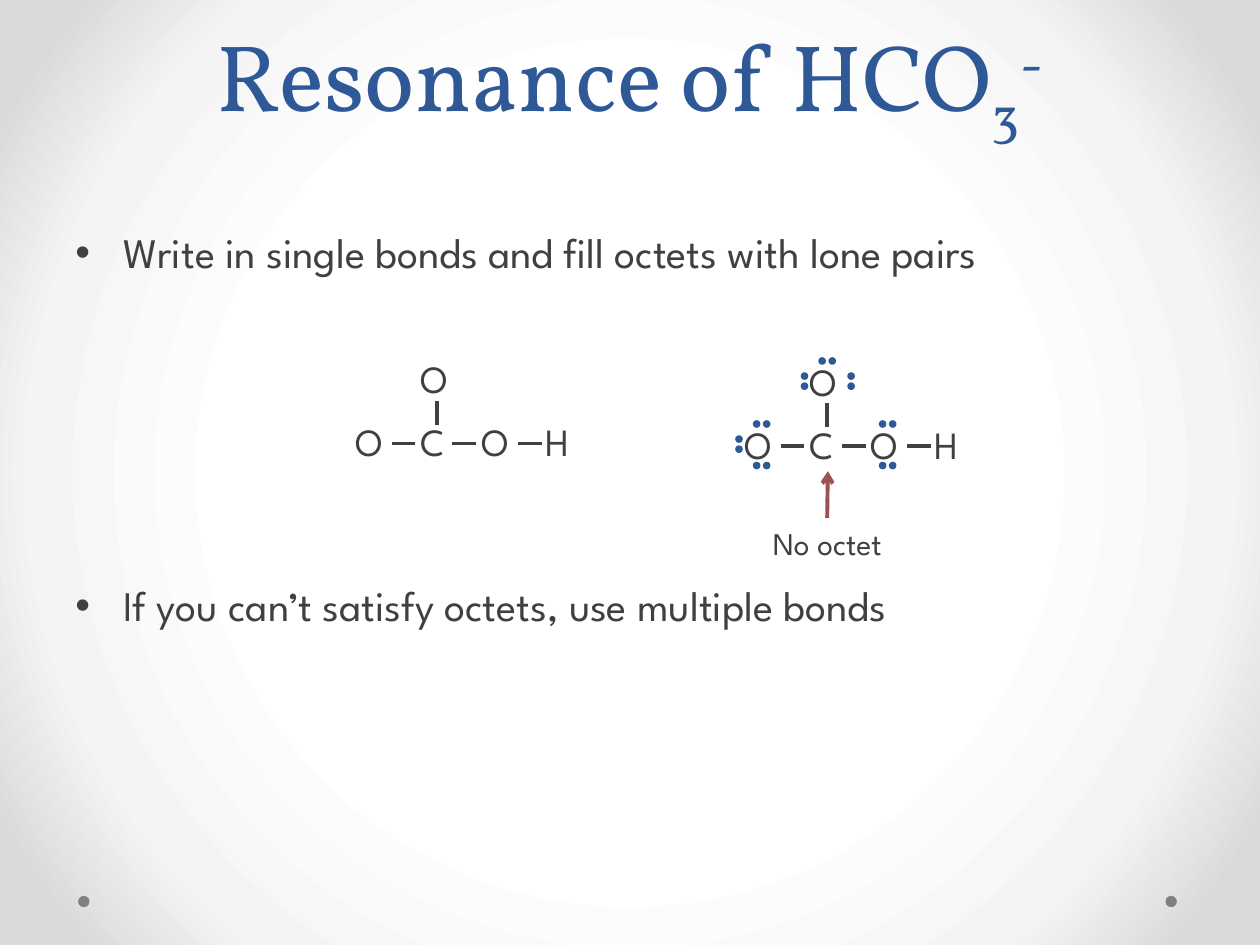
from pptx import Presentation
from pptx.dml.color import RGBColor
from pptx.enum.shapes import MSO_CONNECTOR, MSO_SHAPE
from pptx.enum.text import MSO_ANCHOR, MSO_AUTO_SIZE, PP_ALIGN
from pptx.oxml import parse_xml
from pptx.oxml.ns import nsdecls, qn
from pptx.util import Inches, Pt

WIDTH, HEIGHT = 10, 7.5
MARGIN = WIDTH * 0.05
BODY_FONT, TITLE_FONT = "League Spartan", "Vollkorn"
INK, BLUE, RED, GRAY, WHITE = "404040", "2F5897", "9C5252", "808080", "FFFFFF"

TITLE = [("Resonance of HCO", 0), ("3", -25), ("-", 30)]
BULLETS = [
    ("Write in single bonds and fill octets with lone pairs", 4.8),
    ("If you can’t satisfy octets, use multiple bonds", 173),
]
LABEL = "No octet"
BACKGROUND_STOPS = [(50, WHITE), (76, "F4F4F4"), (92, "DADADA")]
FOOTER_DOTS = [0.62, 9.25]

ATOM_HEIGHT = 0.47
ATOMS = [
    ("O", 0, -0.5, 0.47, ["above", "left", "right"]),
    ("O", -0.52, 0, 0.47, ["above", "below", "left"]),
    ("C", 0, 0, 0.45, []),
    ("O", 0.48, 0, 0.47, ["above", "below"]),
    ("H", 0.99, 0, 0.41, []),
]
BONDS = [
    (0.05, 0.25, -0.13, 0.25),
    (0.54, 0.25, 0.35, 0.25),
    (0.23, 0.1, 0.23, -0.09),
    (1.06, 0.25, 0.87, 0.25),
]
DOT, PAIR_GAP = 0.05, 0.08
PAIR_PLACES = {
    "above": (0.17, 0.05, True),
    "below": (0.17, 0.38, True),
    "left": (0.03, 0.17, False),
    "right": (0.4, 0.17, False),
}
MOLECULES = [(3.24, 3.27, False), (6.33, 3.29, True)]


def color(value):
    return RGBColor.from_string(value)


def box(*lengths):
    return [Inches(length) for length in lengths]


def style(run, size, font=BODY_FONT, ink=INK):
    run.font.size = Pt(size)
    run.font.name = font
    run.font.color.rgb = color(ink)


def add_text(shapes, text, place, size, wrap):
    text_box = shapes.add_textbox(*box(*place))
    frame = text_box.text_frame
    frame.text = text
    frame.word_wrap = wrap
    frame.auto_size = MSO_AUTO_SIZE.SHAPE_TO_FIT_TEXT
    style(frame.paragraphs[0].runs[0], size)
    return text_box


def add_dot(shapes, x, y, size, fill, outlined):
    dot = shapes.add_shape(MSO_SHAPE.OVAL, *box(x, y, size, size))
    dot.shadow.inherit = False
    dot.fill.solid()
    dot.fill.fore_color.rgb = color(fill)
    if outlined:
        dot.line.color.rgb = color(fill)
        dot.line.width = Pt(0.75)
    else:
        dot.line.fill.background()


def add_line(shapes, ends, ink):
    line = shapes.add_connector(MSO_CONNECTOR.STRAIGHT, *box(*ends))
    line.line.color.rgb = color(ink)
    line.line.width = Pt(2.25)
    line.element.spPr.append(parse_xml(f"<a:effectLst {nsdecls('a')}/>"))
    return line


def add_lone_pair(shapes, atom_x, atom_y, side):
    dx, dy, horizontal = PAIR_PLACES[side]
    for step in (0, PAIR_GAP):
        x = atom_x + dx + (step if horizontal else 0)
        y = atom_y + dy + (0 if horizontal else step)
        add_dot(shapes, x, y, DOT, BLUE, True)


def add_molecule(slide, left, top, with_pairs):
    shapes = slide.shapes.add_group_shape().shapes
    for symbol, dx, dy, width, sides in ATOMS:
        x, y = left + dx, top + dy
        add_text(shapes, symbol, (x, y, width, ATOM_HEIGHT), 22, symbol == "C")
        for side in sides if with_pairs else []:
            add_lone_pair(shapes, x, y, side)
    for x1, y1, x2, y2 in BONDS:
        add_line(shapes, (left + x1, top + y1, left + x2, top + y2), INK)


def paint_background(slide):
    slide.background.fill.gradient()
    gradient = slide.element.find(".//" + qn("a:gradFill"))
    stops = "".join(
        f'<a:gs pos="{share * 1000}"><a:srgbClr val="{value}"/></a:gs>'
        for share, value in BACKGROUND_STOPS
    )
    gradient.getparent().replace(gradient, parse_xml(
        f'<a:gradFill {nsdecls("a")} rotWithShape="1"><a:gsLst>{stops}</a:gsLst>'
        '<a:path path="circle"><a:fillToRect l="50000" t="50000" r="50000" b="50000"/>'
        "</a:path></a:gradFill>"
    ))


def write_title(slide):
    title = slide.shapes.title
    title.left, title.top, title.width, title.height = box(MARGIN, 0, WIDTH - 2 * MARGIN, 1.21)
    frame = title.text_frame
    frame.auto_size = MSO_AUTO_SIZE.NONE
    frame.vertical_anchor = MSO_ANCHOR.BOTTOM
    heading = frame.paragraphs[0]
    heading.alignment = PP_ALIGN.CENTER
    heading.line_spacing = Pt(58)
    for text, baseline in TITLE:
        run = heading.add_run()
        run.text = text
        style(run, 54, TITLE_FONT, BLUE)
        if baseline:
            run.font._element.set("baseline", str(baseline * 1000))


def write_bullets(slide):
    body = slide.shapes.add_textbox(*box(MARGIN, 1.75, WIDTH - 2 * MARGIN, 4.95))
    frame = body.text_frame
    frame.word_wrap = True
    frame.text = "\n".join(text for text, _ in BULLETS)
    for bullet, (_, space) in zip(frame.paragraphs, BULLETS):
        bullet.space_before = Pt(space)
        style(bullet.runs[0], 24)
        properties = bullet._p.get_or_add_pPr()
        properties.set("marL", str(Inches(0.38)))
        properties.set("indent", str(Inches(-0.38)))
        properties.append(parse_xml(f'<a:buFont {nsdecls("a")} typeface="Arial"/>'))
        properties.append(parse_xml(f'<a:buChar {nsdecls("a")} char="•"/>'))


def add_callout(slide):
    label = add_text(slide.shapes, LABEL, (5.87, 4.11, 1.39, 0.4), 18, True)
    label.fill.solid()
    label.fill.fore_color.rgb = color(WHITE)
    label.text_frame.paragraphs[0].alignment = PP_ALIGN.CENTER
    arrow = add_line(slide.shapes, (6.57, 4.11, 6.57, 3.74), RED)
    arrow.begin_connect(label, 0)
    arrow.line._get_or_add_ln().append(parse_xml(f'<a:tailEnd {nsdecls("a")} type="arrow"/>'))


def main():
    deck = Presentation()
    deck.slide_width, deck.slide_height = box(WIDTH, HEIGHT)
    slide = deck.slides.add_slide(deck.slide_layouts[5])
    paint_background(slide)
    for x in FOOTER_DOTS:
        add_dot(slide.shapes, x, 7.11, 0.09, GRAY, False)
    write_bullets(slide)
    write_title(slide)
    for left, top, with_pairs in MOLECULES:
        add_molecule(slide, left, top, with_pairs)
    add_callout(slide)
    deck.save("out.pptx")


if __name__ == "__main__":
    main()
